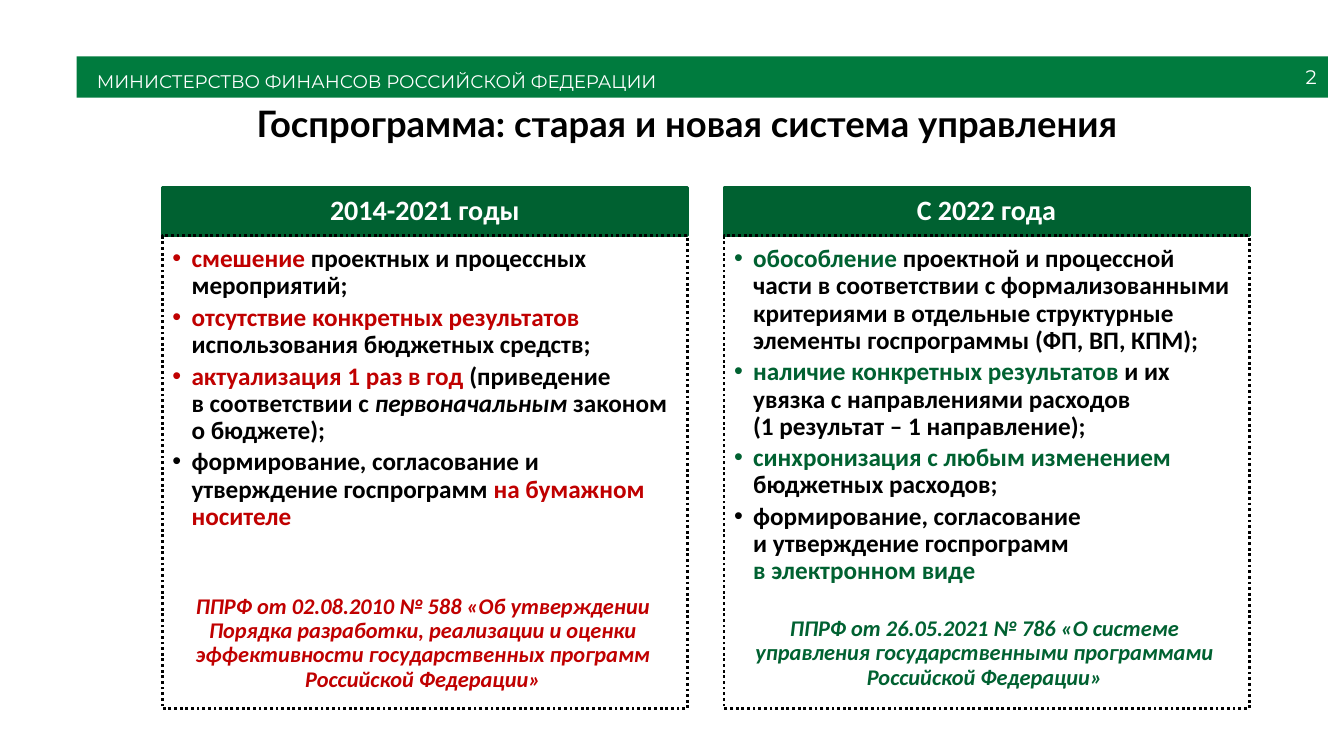
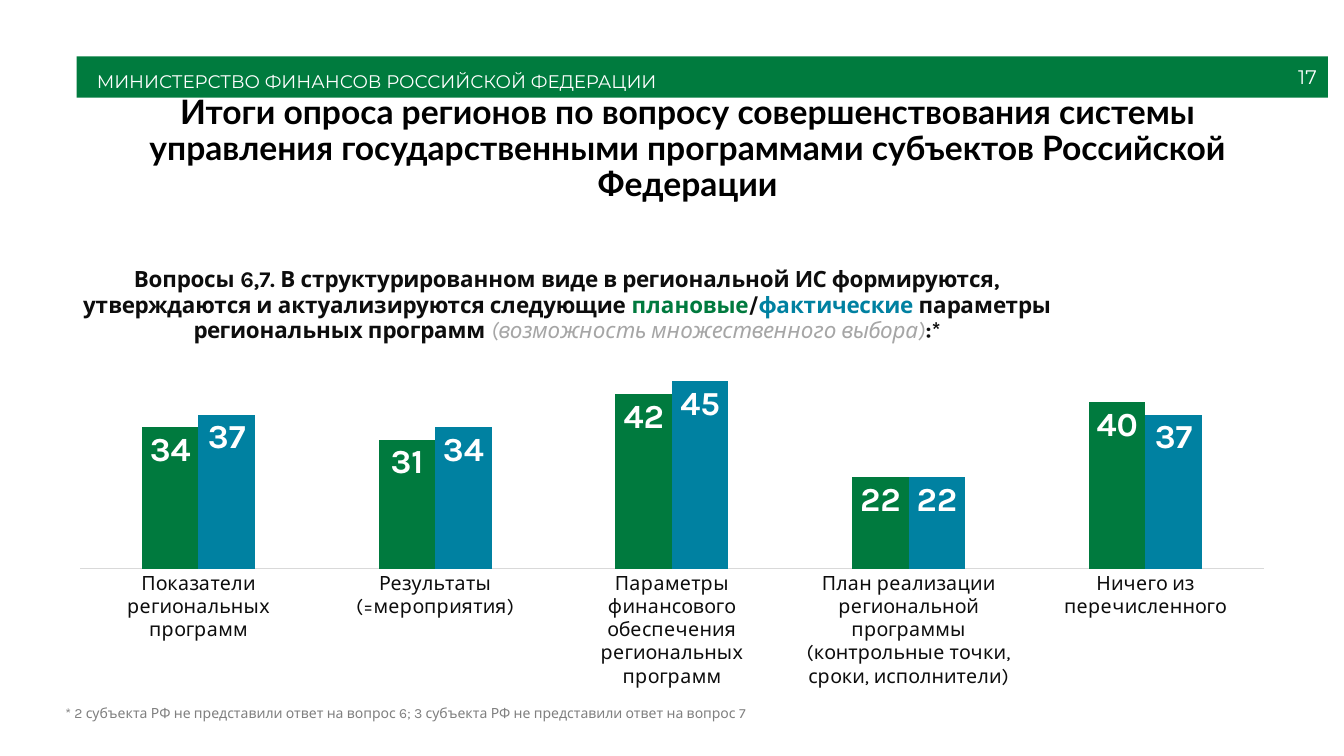
from lxml import etree
from pptx import Presentation
from pptx import util as u
from pptx.chart.data import CategoryChartData
from pptx.dml.color import RGBColor
from pptx.enum import chart as ch, dml, shapes, text
from pptx.oxml.ns import qn

# Scale: 100 px to the inch
PX = 9144
WIDTH, HEIGHT = 1333, 750

BAND_GREEN = RGBColor(0x00, 0x7B, 0x3E)
DARK_GREEN = RGBColor(0x00, 0x61, 0x31)
PLAN_GREEN = RGBColor(0x00, 0x7A, 0x3E)
FACT_BLUE = RGBColor(0x00, 0x81, 0xA1)
RED = RGBColor(0xC0, 0x00, 0x00)
BLACK = RGBColor(0x00, 0x00, 0x00)
INK = RGBColor(0x0D, 0x0D, 0x0D)
GREY = RGBColor(0x80, 0x80, 0x80)
PALE_GREY = RGBColor(0xA6, 0xA6, 0xA6)
AXIS_GREY = RGBColor(0xD9, 0xD9, 0xD9)
WHITE = RGBColor(0xFF, 0xFF, 0xFF)

CENTER, RIGHT = text.PP_ALIGN.CENTER, text.PP_ALIGN.RIGHT
TOP, MIDDLE = text.MSO_ANCHOR.TOP, text.MSO_ANCHOR.MIDDLE

# Content
MINISTRY = "МИНИСТЕРСТВО ФИНАНСОВ РОССИЙСКОЙ ФЕДЕРАЦИИ"

# Bullets are lists of (text, is_accent, is_italic)
PERIODS = [
    {
        "heading": "2014-2021 годы",
        "accent": RED,
        "bullets": [
            [("смешение ", True, False),
             ("проектных и процессных мероприятий;", False, False)],
            [("отсутствие конкретных результатов ", True, False),
             ("использования бюджетных средств;", False, False)],
            [("актуализация 1 раз в год ", True, False),
             ("(приведение \nв соответствии с ", False, False),
             ("первоначальным", False, True),
             (" законом о бюджете);", False, False)],
            [("формирование, согласование и утверждение госпрограмм ", False, False),
             ("на бумажном носителе", True, False)],
        ],
        "decree": "ППРФ от 02.08.2010 № 588 «Об утверждении Порядка разработки, "
                  "реализации и оценки эффективности государственных программ "
                  "Российской Федерации»",
        "decree_gap": 43,
    },
    {
        "heading": "С 2022 года",
        "accent": DARK_GREEN,
        "bullets": [
            [("обособление ", True, False),
             ("проектной и процессной части в соответствии с формализованными "
              "критериями в отдельные структурные элементы госпрограммы "
              "(ФП, ВП, КПМ);", False, False)],
            [("наличие конкретных результатов ", True, False),
             ("и их увязка с направлениями расходов \n"
              "(1 результат – 1 направление);", False, False)],
            [("синхронизация с любым изменением ", True, False),
             ("бюджетных расходов;", False, False)],
            [("формирование, согласование \nи утверждение госпрограмм \n", False, False),
             ("в электронном виде", True, False)],
        ],
        "decree": "ППРФ от 26.05.2021 № 786 «О системе управления "
                  "государственными программами Российской Федерации»",
        "decree_gap": 20,
    },
]

# Question runs: (text, colour, bold, italic)
QUESTION = [
    ("Вопросы 6,7. В структурированном виде в региональной ИС формируются, "
     "утверждаются и актуализируются следующие ", INK, True, False),
    ("плановые", PLAN_GREEN, True, False),
    ("/", INK, True, False),
    ("фактические", FACT_BLUE, True, False),
    (" параметры региональных программ ", INK, True, False),
    ("(возможность множественного выбора)", PALE_GREY, False, True),
    (":*", INK, True, False),
]
ANSWERS = [
    ("Показатели региональных программ", 34, 37),
    ("Результаты (=мероприятия)", 31, 34),
    ("Параметры финансового обеспечения региональных программ", 42, 45),
    ("План реализации региональной программы "
     "(контрольные точки, сроки, исполнители)", 22, 22),
    ("Ничего из перечисленного", 40, 37),
]
SERIES = [("Плановые", PLAN_GREEN), ("Фактические", FACT_BLUE)]
FOOTNOTE = ("* 2 субъекта РФ не представили ответ на вопрос 6; "
            "3 субъекта РФ не представили ответ на вопрос 7")


# Shared helpers
def place(part, *box):
    part.left, part.top, part.width, part.height = [n * PX for n in box]


def set_font(font, face, size, color, bold=False, italic=False):
    font.name, font.size = face, u.Pt(size)
    font.bold, font.italic = bold, italic
    font.color.rgb = color


def set_frame(frame, anchor, insets):
    frame.word_wrap = True
    frame.auto_size = text.MSO_AUTO_SIZE.NONE
    frame.vertical_anchor = anchor
    (frame.margin_left, frame.margin_top,
     frame.margin_right, frame.margin_bottom) = [n * PX for n in insets]


def set_spacing(paragraph, line=1.0, before=0, after=0):
    paragraph.line_spacing = line
    paragraph.space_before, paragraph.space_after = u.Pt(before), u.Pt(after)


def add_runs(paragraph, words, *style):
    for number, line in enumerate(words.split("\n")):
        if number:
            paragraph.add_line_break()
        if line:
            run = paragraph.add_run()
            run.text = line
            set_font(run.font, *style)


def write_line(frame, words, style, align=None, line=1.0):
    frame.text = words
    paragraph = frame.paragraphs[0]
    paragraph.alignment = align
    set_spacing(paragraph, line)
    set_font(paragraph.runs[0].font, *style)


def set_bullet(paragraph, color=None):
    """Coloured hanging bullet, or none when there is no colour."""
    props = paragraph._p.get_or_add_pPr()
    indent = 19 * PX if color is not None else 0
    props.set("marL", str(indent))
    props.set("indent", str(-indent))
    if color is None:
        etree.SubElement(props, qn("a:buNone"))
        return
    fill = etree.SubElement(props, qn("a:buClr"))
    etree.SubElement(fill, qn("a:srgbClr")).set("val", str(color))
    etree.SubElement(props, qn("a:buFont")).set("typeface", "Arial")
    etree.SubElement(props, qn("a:buChar")).set("char", "•")


def set_layout(element, index, **parts):
    """Fixed position of a chart part, in shares of the chart."""
    for old in element.findall(qn("c:layout")):
        element.remove(old)
    layout = etree.Element(qn("c:layout"))
    manual = etree.SubElement(layout, qn("c:manualLayout"))
    for key, value in parts.items():
        etree.SubElement(manual, qn("c:" + key)).set("val", str(value))
    element.insert(index, layout)


def add_slide(prs, layout, number, title, size, line, height):
    slide = prs.slides.add_slide(prs.slide_layouts[layout])

    # Ministry band
    band = slide.shapes.add_shape(shapes.MSO_SHAPE.RECTANGLE, 0, 0, 0, 0)
    place(band, 76, 56, 1241, 41)
    band.shadow.inherit = False
    band.fill.solid()
    band.fill.fore_color.rgb = BAND_GREEN
    band.line.fill.background()
    set_frame(band.text_frame, MIDDLE, (20, 9, 0, 0))
    write_line(band.text_frame, MINISTRY, ("Montserrat", 13, WHITE),
               text.PP_ALIGN.LEFT)

    # Page number
    page = slide.shapes.add_textbox(0, 0, 0, 0)
    place(page, 1016, 56, 300, 40)
    set_frame(page.text_frame, MIDDLE, (10, 5, 10, 5))
    write_line(page.text_frame, str(number), ("Montserrat", 14, WHITE), RIGHT)

    # Title
    heading = slide.shapes.title
    place(heading, 107, 99, 1150, height)
    set_frame(heading.text_frame, MIDDLE, (10, 2, 10, 2))
    write_line(heading.text_frame, title, ("Lato", size, BLACK, True), CENTER, line)
    return slide


# Slide: old and new system
def fill_period(heading, body, period, left):
    width, top, heading_height, body_height = 521, 186, 48, 469
    accent = period["accent"]

    place(heading, left, top, width, heading_height)
    heading.fill.solid()
    heading.fill.fore_color.rgb = DARK_GREEN
    heading.line.color.rgb = DARK_GREEN
    heading.line.width = u.Pt(2)
    set_frame(heading.text_frame, MIDDLE, (16, 9, 16, 9))
    write_line(heading.text_frame, period["heading"],
               ("Calibri", 20, WHITE, True), CENTER, 0.9)

    place(body, left, top + heading_height, width, body_height)
    body.line.color.rgb = BLACK
    body.line.width = u.Pt(2)
    body.line.dash_style = dml.MSO_LINE.ROUND_DOT
    frame = body.text_frame
    set_frame(frame, TOP, (10, 10, 14, 16))
    for number, bullet in enumerate(period["bullets"]):
        paragraph = frame.add_paragraph() if number else frame.paragraphs[0]
        set_bullet(paragraph, accent if bullet[0][1] else BLACK)
        set_spacing(paragraph, 0.9, after=3)
        for words, is_accent, italic in bullet:
            add_runs(paragraph, words, "Calibri", 18,
                     accent if is_accent else BLACK, True, italic)

    decree = frame.add_paragraph()
    set_bullet(decree)
    decree.alignment = CENTER
    set_spacing(decree, 0.9, before=period["decree_gap"])
    add_runs(decree, period["decree"], "Calibri", 16, accent, True, True)


def build_comparison(prs):
    slide = add_slide(prs, 4, 2, "Госпрограмма: старая и новая система управления",
                      26, 0.85, 53)
    holders = slide.placeholders
    for column, period in enumerate(PERIODS):
        fill_period(holders[1 + 2 * column], holders[2 + 2 * column],
                    period, 161 + 557 * column)


# Slide: survey results
def build_survey(prs):
    slide = add_slide(prs, 5, 17,
                      "Итоги опроса регионов по вопросу совершенствования системы "
                      "управления государственными программами субъектов "
                      "Российской Федерации", 24, 0.9, 99)
    names, *columns = zip(*ANSWERS)
    data = CategoryChartData()
    data.categories = names
    for (name, _), values in zip(SERIES, columns):
        data.add_series(name, values)
    survey = slide.shapes.add_chart(
        ch.XL_CHART_TYPE.COLUMN_CLUSTERED,
        *[n * PX for n in (55, 252, 1223, 440)], data).chart
    set_font(survey.font, "Karla", 10, INK)
    survey.has_legend = False

    # Question above the columns
    survey.has_title = True
    question = survey.chart_title.text_frame.paragraphs[0]
    question.alignment = CENTER
    for words, color, bold, italic in QUESTION:
        add_runs(question, words, "Karla", 16, color, bold, italic)
    set_layout(survey.chart_title._element, 1,
               xMode="edge", yMode="edge", x=0.02, y=0.02)
    set_layout(survey._chartSpace.chart.plotArea, 0, layoutTarget="inner",
               xMode="edge", yMode="edge", x=0.02, y=0.24, w=0.96, h=0.47)

    # Axes
    values = survey.value_axis
    values.minimum_scale, values.maximum_scale = 0, 50
    values.has_major_gridlines = False
    values.visible = False
    answers = survey.category_axis
    answers.major_tick_mark = ch.XL_TICK_MARK.NONE
    answers.format.line.color.rgb = AXIS_GREY
    answers.format.line.width = u.Pt(0.75)
    set_font(answers.tick_labels.font, "Karla", 14, INK)

    # Columns and their values
    plot = survey.plots[0]
    plot.gap_width, plot.overlap = 219, 0
    plot.vary_by_categories = False
    for series, (_, color) in zip(plot.series, SERIES):
        series.format.fill.solid()
        series.format.fill.fore_color.rgb = color
        labels = series.data_labels
        labels.show_value = True
        labels.position = ch.XL_LABEL_POSITION.INSIDE_END
        set_font(labels.font, "Karla", 24, WHITE, True)

    # Footnote
    footnote = slide.shapes.add_textbox(0, 0, 0, 0)
    place(footnote, 55, 694, 1223, 27)
    set_frame(footnote.text_frame, TOP, (10, 5, 10, 5))
    write_line(footnote.text_frame, FOOTNOTE, ("Karla", 10, GREY),
               text.PP_ALIGN.JUSTIFY)


def main():
    prs = Presentation()
    prs.slide_width, prs.slide_height = WIDTH * PX, HEIGHT * PX
    build_comparison(prs)
    build_survey(prs)
    prs.save("out.pptx")


if __name__ == "__main__":
    main()
